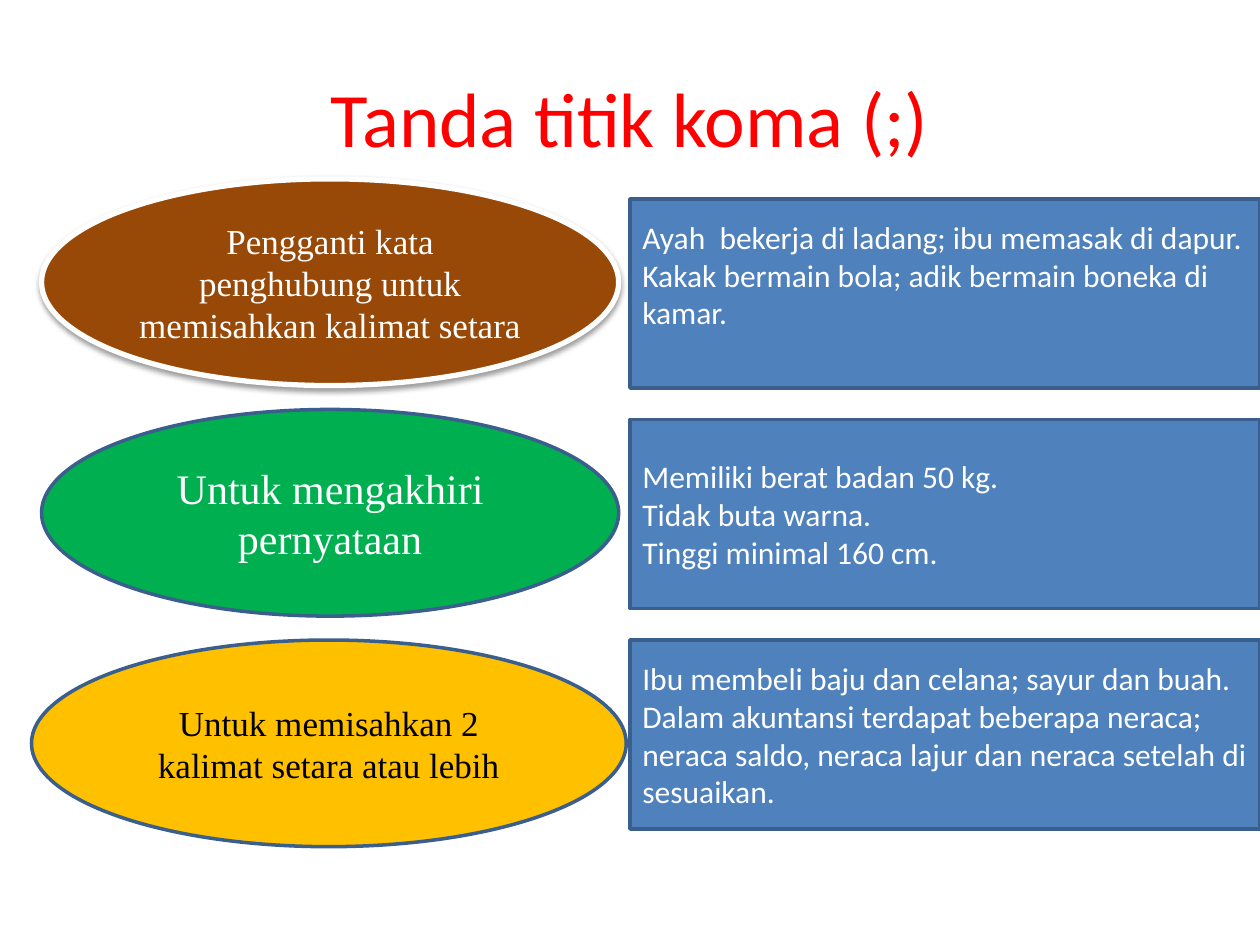
from dataclasses import dataclass

from lxml import etree
from pptx import Presentation
from pptx.dml.color import RGBColor
from pptx.enum.shapes import MSO_SHAPE
from pptx.enum.text import MSO_ANCHOR, PP_ALIGN
from pptx.oxml.ns import qn
from pptx.util import Inches, Pt

OVAL, RECT = MSO_SHAPE.OVAL, MSO_SHAPE.RECTANGLE
MIDDLE = MSO_ANCHOR.MIDDLE
LEFT, CENTER = PP_ALIGN.LEFT, PP_ALIGN.CENTER


@dataclass(frozen=True)
class Theme:
    sans: str = "Calibri"
    serif: str = "Times New Roman"
    red: str = "FF0000"
    white: str = "FFFFFF"
    black: str = "000000"
    brown: str = "984807"
    green: str = "00B050"
    amber: str = "FFC000"
    blue: str = "4F81BD"
    outline: str = "3A5F8C"
    title: int = 44
    large: int = 24
    medium: int = 20
    body: int = 18


class Deck:
    def __init__(self, prs, theme):
        self.theme = theme
        self.s = prs.slides.add_slide(prs.slide_layouts[6])

    def add_text(self, sp, lines, size, font, color, align):
        tf = sp.text_frame
        tf.word_wrap = True
        tf.vertical_anchor = MIDDLE
        for i, line in enumerate(lines):
            p = tf.add_paragraph() if i else tf.paragraphs[0]
            p.alignment = align
            r = p.add_run()
            r.text = line
            r.font.size = Pt(size)
            r.font.name = font
            r.font.color.rgb = RGBColor.from_string(color)

    def title(self, text, x, y, w, h):
        t = self.theme
        sp = self.s.shapes.add_textbox(Inches(x), Inches(y), Inches(w), Inches(h))
        self.add_text(sp, [text], t.title, t.sans, t.red, CENTER)

    def shape(self, kind, x, y, w, h, fill, line, width):
        sp = self.s.shapes.add_shape(kind, Inches(x), Inches(y), Inches(w), Inches(h))
        sp.shadow.inherit = False
        sp.fill.solid()
        sp.fill.fore_color.rgb = RGBColor.from_string(fill)
        sp.line.color.rgb = RGBColor.from_string(line)
        sp.line.width = Pt(width)
        return sp

    def rule(self, text, x, y, w, fill, size, color, raised=False):
        t = self.theme
        line, width = (t.white, 3) if raised else (t.outline, 2)
        sp = self.shape(OVAL, x, y, w, 1.64, fill, line, width)
        if raised:
            self.shadow(sp)
        self.add_text(sp, [text], size, t.serif, color, CENTER)

    def examples(self, lines, y, bottom=0.05):
        t = self.theme
        sp = self.shape(RECT, 5, y, 5, 1.5, t.blue, t.outline, 2)
        sp.text_frame.margin_bottom = Inches(bottom)
        self.add_text(sp, lines, t.body, t.sans, t.white, LEFT)

    def shadow(self, sp):
        effects = sp._element.spPr.find(qn("a:effectLst"))
        outer = etree.SubElement(effects, qn("a:outerShdw"), blurRad=str(Pt(3.1)),
                                 dist=str(Pt(1.6)), dir="5400000", rotWithShape="0")
        color = etree.SubElement(outer, qn("a:srgbClr"), val=self.theme.black)
        etree.SubElement(color, qn("a:alpha"), val="38000")


def main():
    prs = Presentation()
    prs.slide_width, prs.slide_height = Inches(10), Inches(7.5)
    t = Theme()
    deck = Deck(prs, t)
    deck.title("Tanda titik koma (;)", 0.5, 0.3, 9, 1.25)

    top, pitch = 1.42, 1.83
    deck.rule("Pengganti kata penghubung untuk memisahkan kalimat setara",
              0.33, top, 4.58, t.brown, t.medium, t.white, raised=True)
    deck.rule("Untuk mengakhiri pernyataan",
              0.33, top + pitch, 4.58, t.green, t.large, t.white)
    deck.rule("Untuk memisahkan 2 kalimat setara atau lebih",
              0.25, top + 2 * pitch, 4.72, t.amber, t.medium, t.black)

    top, pitch = 1.58, 1.75
    deck.examples(["Ayah  bekerja di ladang; ibu memasak di dapur.",
                   "Kakak bermain bola; adik bermain boneka di kamar."],
                  top, bottom=0.35)
    deck.examples(["Memiliki berat badan 50 kg.",
                   "Tidak buta warna.",
                   "Tinggi minimal 160 cm."], top + pitch)
    deck.examples(["Ibu membeli baju dan celana; sayur dan buah.",
                   "Dalam akuntansi terdapat beberapa neraca; neraca saldo, "
                   "neraca lajur dan neraca setelah di sesuaikan."], top + 2 * pitch)
    prs.save("out.pptx")


if __name__ == "__main__":
    main()
